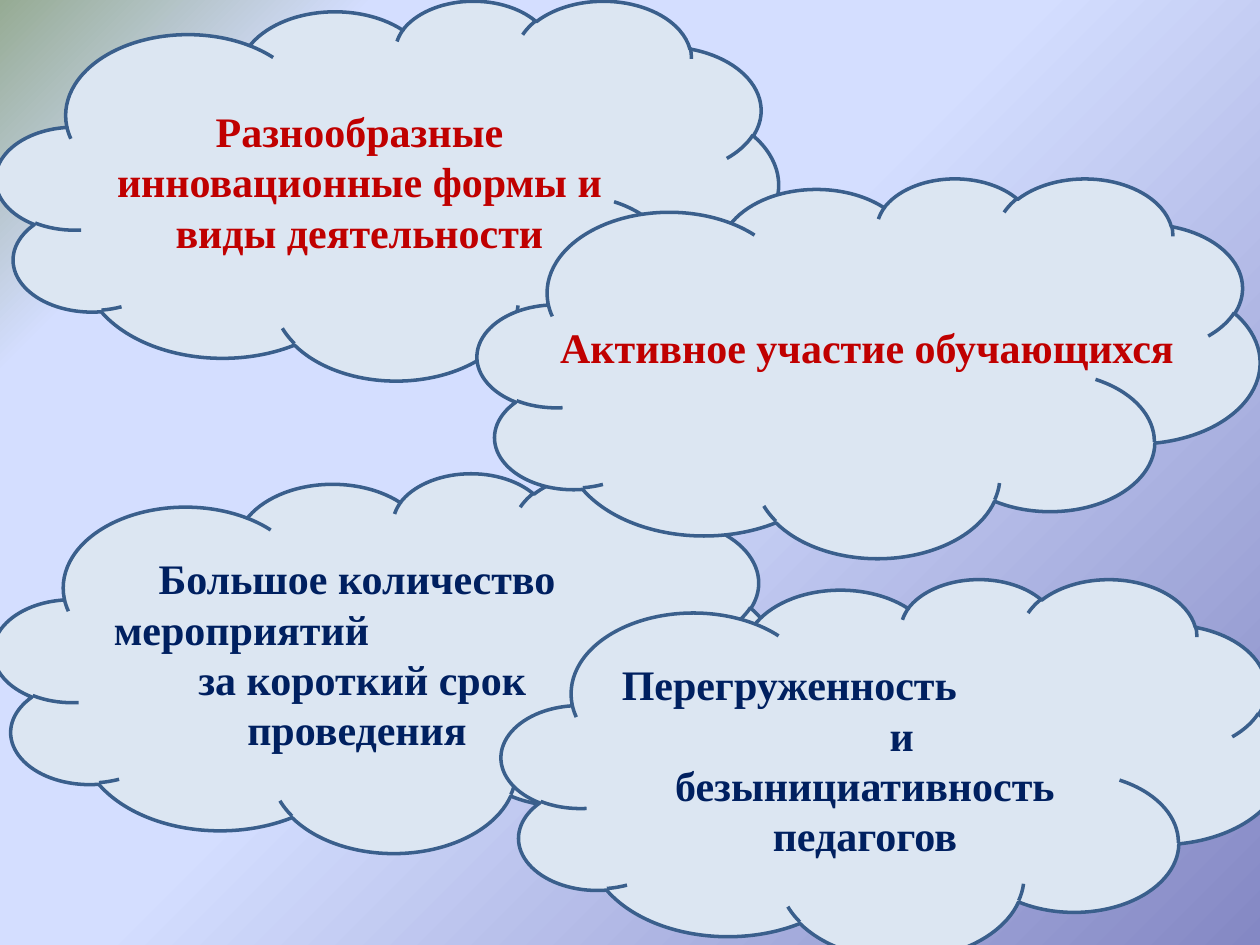
from pptx import Presentation
from pptx.dml.color import RGBColor
from pptx.enum import shapes, text
from pptx.oxml import parse_xml
from pptx.oxml.ns import nsdecls
from pptx.util import Pt

RED, NAVY = "C00000", "002060"
CLOUD_W, CLOUD_H = 447, 217


def paint(color_format, color):
    color_format.rgb = RGBColor.from_string(color)


def add_text(tf, line, first=False, color=NAVY, align="CENTER", indent=0):
    p = tf.paragraphs[0] if first else tf.add_paragraph()
    p.alignment = getattr(text.PP_ALIGN, align)
    if indent:
        p._p.get_or_add_pPr().set("marL", str(Pt(indent)))
    r = p.add_run()
    r.text = line
    r.font.name = "Times New Roman"
    r.font.size = Pt(24)
    r.font.bold = True
    paint(r.font.color, color)


prs = Presentation()
prs.slide_width, prs.slide_height = Pt(720), Pt(540)
slide = prs.slides.add_slide(prs.slide_layouts[6])

# Background: radial gradient growing from the bottom right corner
stops = [(0, "8488C4"), (53, "D4DEFF"), (83, "D4DEFF"), (100, "96AB94")]
gs = "".join(f'<a:gs pos="{pos * 1000}"><a:srgbClr val="{color}"/></a:gs>'
             for pos, color in stops)
bg = parse_xml(
    f'<p:bg {nsdecls("p", "a")}><p:bgPr><a:gradFill rotWithShape="1">'
    f'<a:gsLst>{gs}</a:gsLst><a:path path="circle">'
    '<a:fillToRect l="100000" t="100000"/></a:path></a:gradFill>'
    '<a:effectLst/></p:bgPr></p:bg>')
slide.element.cSld.insert(0, bg)

# Clouds, back to front: left, top, lines with their format
clouds = [
    (-2.2, 0, [("Разнообразные инновационные формы и виды деятельности",
                dict(color=RED))]),
    (-3.6, 270, [("Большое количество", {}),
                 ("мероприятий", dict(align="LEFT")),
                 ("за короткий срок", dict(indent=6)),
                 ("проведения", {})]),
    (272.9, 101.5, []),
    (286.6, 330.5, [("Перегруженность", dict(align="LEFT")),
                    ("и", dict(indent=42)),
                    ("безынициативность педагогов", {})]),
]
for left, top, lines in clouds:
    sp = slide.shapes.add_shape(shapes.MSO_SHAPE.CLOUD, Pt(left), Pt(top),
                                Pt(CLOUD_W), Pt(CLOUD_H))
    sp.shadow.inherit = False
    sp.fill.solid()
    paint(sp.fill.fore_color, "DCE6F2")
    paint(sp.line.color, "3A5F8C")
    sp.line.width = Pt(2)
    tf = sp.text_frame
    tf.word_wrap = True
    tf.vertical_anchor = text.MSO_ANCHOR.MIDDLE
    for i, (line, style) in enumerate(lines):
        add_text(tf, line, first=i == 0, **style)

    # Caption lying over the cloud that has no text of its own
    if not lines:
        tb = slide.shapes.add_textbox(Pt(297.4), Pt(180), Pt(396), Pt(36))
        tb.text_frame.word_wrap = True
        tb.text_frame.auto_size = text.MSO_AUTO_SIZE.SHAPE_TO_FIT_TEXT
        add_text(tb.text_frame, "Активное участие обучающихся",
                 first=True, color=RED)

prs.save("out.pptx")
